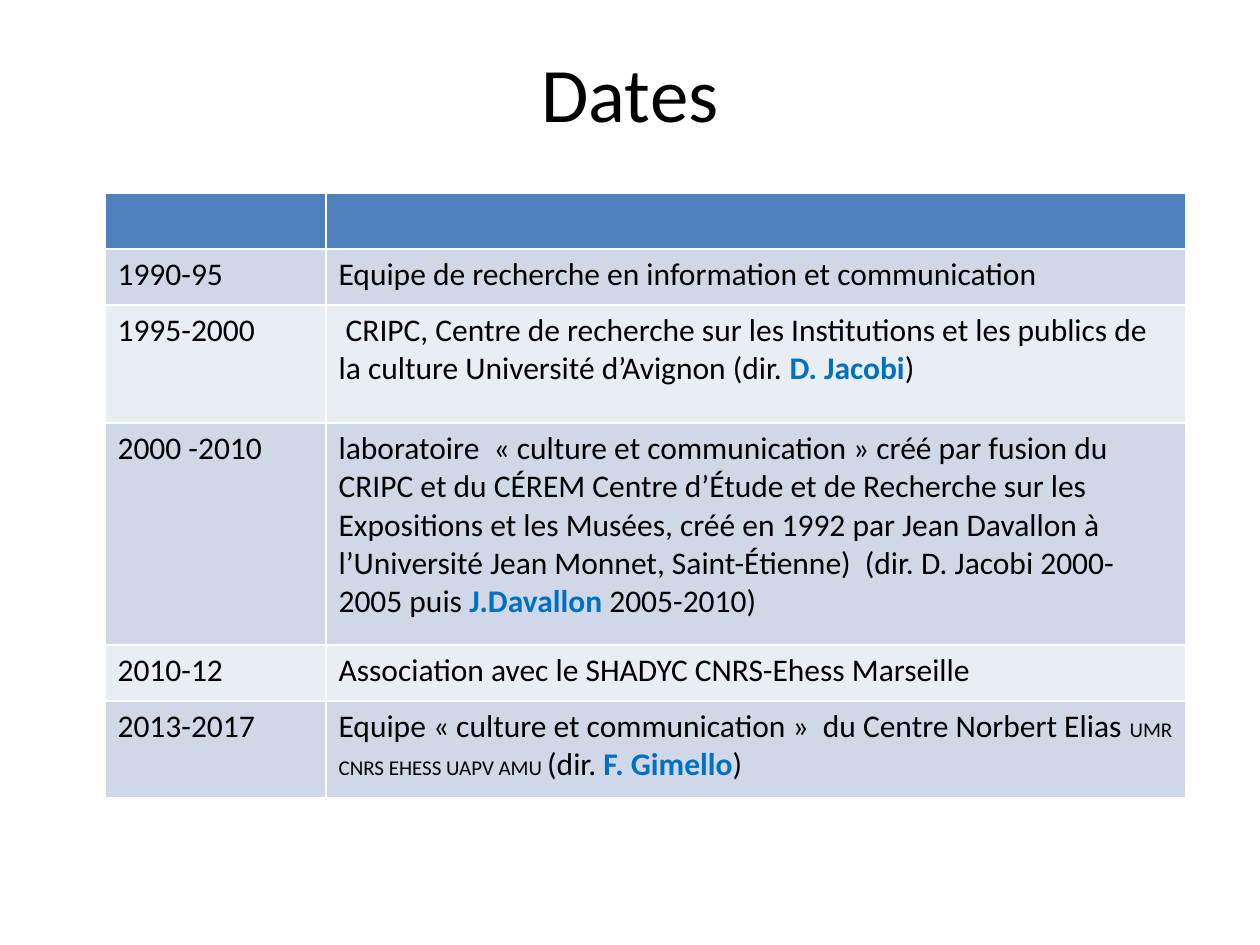
from pptx import Presentation
from pptx.dml.color import RGBColor
from pptx.enum.text import MSO_ANCHOR, PP_ALIGN
from pptx.util import Emu, Pt

COLORS = {"text": "000000", "director": "0070C0", "header": "4F81BD",
          "odd": "D0D8E8", "even": "E9EDF4"}
FONT = "Calibri"


def px(length):
    return Emu(round(length * 914400 / 126))


def color(name):
    return RGBColor.from_string(COLORS[name])


prs = Presentation()
prs.slide_width, prs.slide_height = px(1260), px(945)
slide = prs.slides.add_slide(prs.slide_layouts[5])

# Title
title = slide.shapes.title
title.left, title.top, title.width, title.height = px(63), px(38), px(1134), px(107)
title.text_frame.text = "Dates"
title.text_frame.vertical_anchor = MSO_ANCHOR.MIDDLE
heading = title.text_frame.paragraphs[0]
heading.alignment = PP_ALIGN.CENTER
heading.font.name = FONT
heading.font.size = Pt(44)
heading.font.color.rgb = color("text")

# Each period: dates, then pieces of text with their style
periods = [
    ("1990-95", [("Equipe de recherche en information et communication", "plain")]),
    ("1995-2000", [
        (" CRIPC, Centre de recherche sur les Institutions et les publics de "
         "la culture Université d’Avignon (dir. ", "plain"),
        ("D. Jacobi", "director"), (")", "plain")]),
    ("2000 -2010", [
        ("laboratoire  « culture et communication » créé par fusion du "
         "CRIPC et du CÉREM Centre d’Étude et de Recherche sur les "
         "Expositions et les Musées, créé en 1992 par Jean Davallon à "
         "l’Université Jean Monnet, Saint-Étienne)  (dir. D. Jacobi "
         "2000-2005 puis ", "plain"),
        ("J.Davallon ", "director"), ("2005-2010)", "plain")]),
    ("2010-12", [("Association avec le SHADYC CNRS-Ehess Marseille", "plain")]),
    ("2013-2017", [
        ("Equipe « culture et communication »  du Centre Norbert Elias ", "plain"),
        ("UMR CNRS EHESS UAPV AMU ", "small"), ("(dir. ", "plain"),
        ("F. Gimello", "director"), (")", "plain")]),
]

# Table grid
column_widths = [221, 860]
row_heights = [56, 56, 118, 222, 56, 97]
timeline = slide.shapes.add_table(
    len(row_heights), len(column_widths), px(105), px(193),
    px(sum(column_widths)), px(sum(row_heights))).table
for column, width in zip(timeline.columns, column_widths):
    column.width = px(width)
for row, height in zip(timeline.rows, row_heights):
    row.height = px(height)

# Header and alternating bands
for index, row in enumerate(timeline.rows):
    band = "header" if index == 0 else ("odd" if index % 2 else "even")
    for cell in row.cells:
        cell.fill.solid()
        cell.fill.fore_color.rgb = color(band)

# Period texts
for index, (dates, description) in enumerate(periods, start=1):
    for cell, pieces in zip(timeline.rows[index].cells,
                            ([(dates, "plain")], description)):
        paragraph = cell.text_frame.paragraphs[0]
        paragraph.font.name = FONT
        for words, style in pieces:
            run = paragraph.add_run()
            run.text = words
            run.font.name = FONT
            run.font.size = Pt(12 if style == "small" else 18)
            run.font.bold = style == "director"
            run.font.color.rgb = color("director" if style == "director" else "text")

prs.save("out.pptx")
